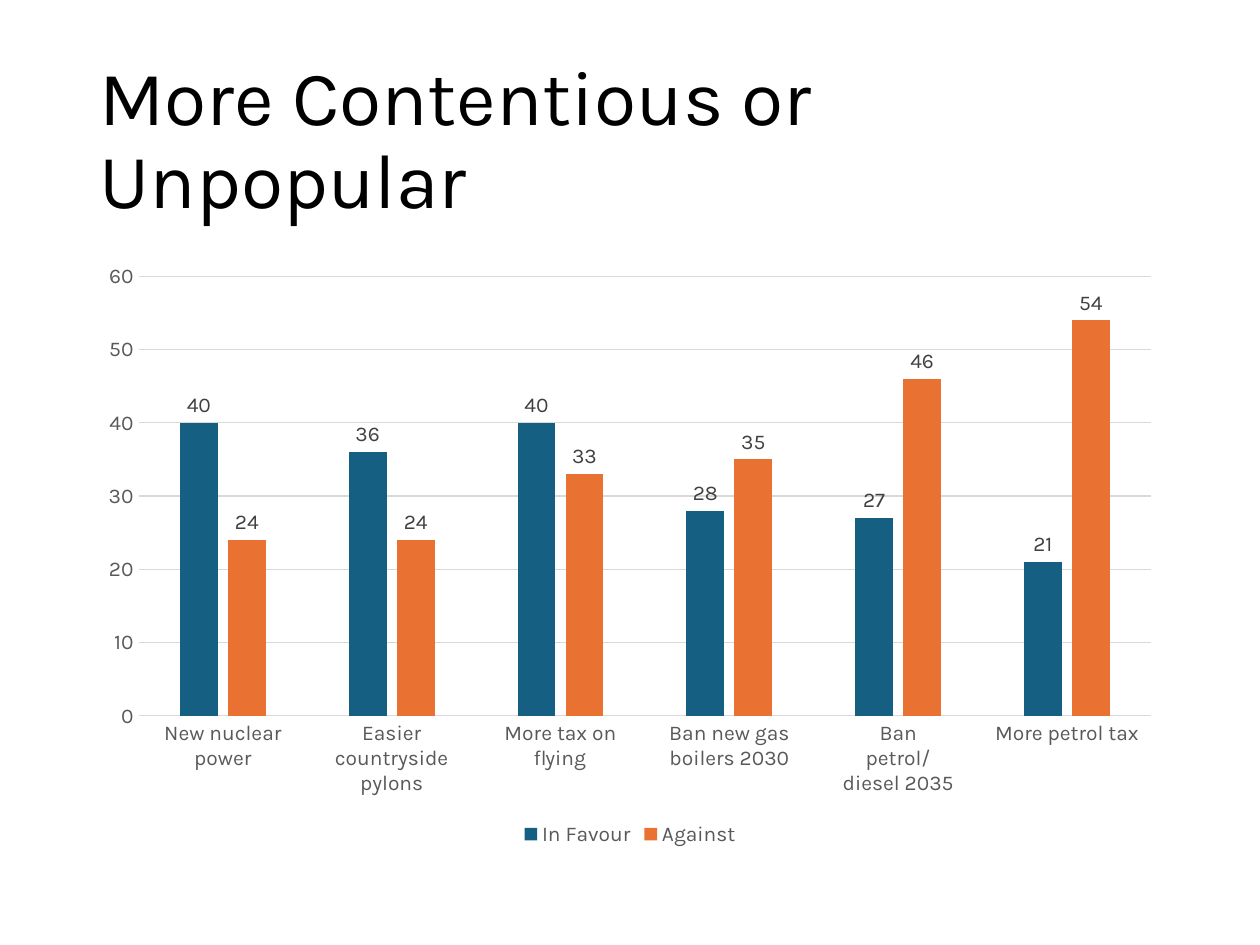
"""Build a slide with a column chart of support for contentious policies."""
from pptx import Presentation
from pptx.chart.data import CategoryChartData
from pptx.dml.color import RGBColor
from pptx.enum.chart import XL_CHART_TYPE, XL_LABEL_POSITION, XL_LEGEND_POSITION, XL_TICK_MARK
from pptx.enum.text import MSO_ANCHOR
from pptx.util import Inches, Pt

COLUMNS = XL_CHART_TYPE.COLUMN_CLUSTERED
OUTSIDE_END = XL_LABEL_POSITION.OUTSIDE_END
BOTTOM = XL_LEGEND_POSITION.BOTTOM
NO_TICK = XL_TICK_MARK.NONE
MIDDLE = MSO_ANCHOR.MIDDLE

BLACK = RGBColor(0x00, 0x00, 0x00)
WHITE = RGBColor(0xFF, 0xFF, 0xFF)
AXIS_TEXT = RGBColor(0x59, 0x59, 0x59)
LABEL_TEXT = RGBColor(0x40, 0x40, 0x40)
GRID = RGBColor(0xD9, 0xD9, 0xD9)
BLUE = RGBColor(0x15, 0x60, 0x82)
ORANGE = RGBColor(0xE9, 0x71, 0x32)
FONT = "Karla"

TITLE = "More Contentious or Unpopular"
POLICIES = [
    "New nuclear power",
    "Easier countryside pylons",
    "More tax on flying",
    "Ban new gas boilers 2030",
    "Ban petrol/diesel 2035",
    "More petrol tax",
]
SERIES = [
    ("In Favour", BLUE, [40, 36, 40, 28, 27, 21]),
    ("Against", ORANGE, [24, 24, 33, 35, 46, 54]),
]
LEFT, WIDTH = Inches(0.69), Inches(8.62)


def set_font(font, size=12, color=AXIS_TEXT):
    font.name = FONT
    font.size = Pt(size)
    font.bold = False
    font.color.rgb = color


def set_line(line):
    line.color.rgb = GRID
    line.width = Pt(0.75)


def add_text(slide, text, top, height, size=44, color=BLACK, spacing=0.9):
    tf = slide.shapes.add_textbox(LEFT, top, WIDTH, height).text_frame
    tf.word_wrap = True
    tf.vertical_anchor = MIDDLE
    p = tf.paragraphs[0]
    p.line_spacing = spacing
    r = p.add_run()
    r.text = text
    set_font(r.font, size, color)


def add_policy_chart(slide, top, height):
    data = CategoryChartData()
    data.categories = POLICIES
    for name, _, values in SERIES:
        data.add_series(name, values)
    chart = slide.shapes.add_chart(COLUMNS, LEFT, top, WIDTH, height, data).chart
    set_font(chart.font, 10, BLACK)
    chart.has_title = False
    chart.has_legend = True
    chart.legend.position = BOTTOM
    chart.legend.include_in_layout = False
    set_font(chart.legend.font)

    for axis in (chart.category_axis, chart.value_axis):
        axis.major_tick_mark = axis.minor_tick_mark = NO_TICK
        set_font(axis.tick_labels.font)
    set_line(chart.category_axis.format.line)
    value_axis = chart.value_axis
    value_axis.minimum_scale, value_axis.maximum_scale, value_axis.major_unit = 0, 60, 10
    value_axis.format.line.fill.background()
    set_line(value_axis.major_gridlines.format.line)

    plot = chart.plots[0]
    plot.gap_width, plot.overlap = 219, -27
    plot.vary_by_categories = False
    for series, (_, color, _) in zip(plot.series, SERIES):
        series.format.fill.solid()
        series.format.fill.fore_color.rgb = color
        labels = series.data_labels
        labels.show_value = True
        labels.position = OUTSIDE_END
        set_font(labels.font, color=LABEL_TEXT)


def main():
    prs = Presentation()
    prs.slide_width, prs.slide_height = Inches(10), Inches(7.5)
    slide = prs.slides.add_slide(prs.slide_layouts[6])
    slide.background.fill.solid()
    slide.background.fill.fore_color.rgb = WHITE
    add_text(slide, TITLE, Inches(0.4), Inches(1.45))
    add_policy_chart(slide, Inches(2), Inches(4.76))
    prs.save("out.pptx")


if __name__ == "__main__":
    main()
